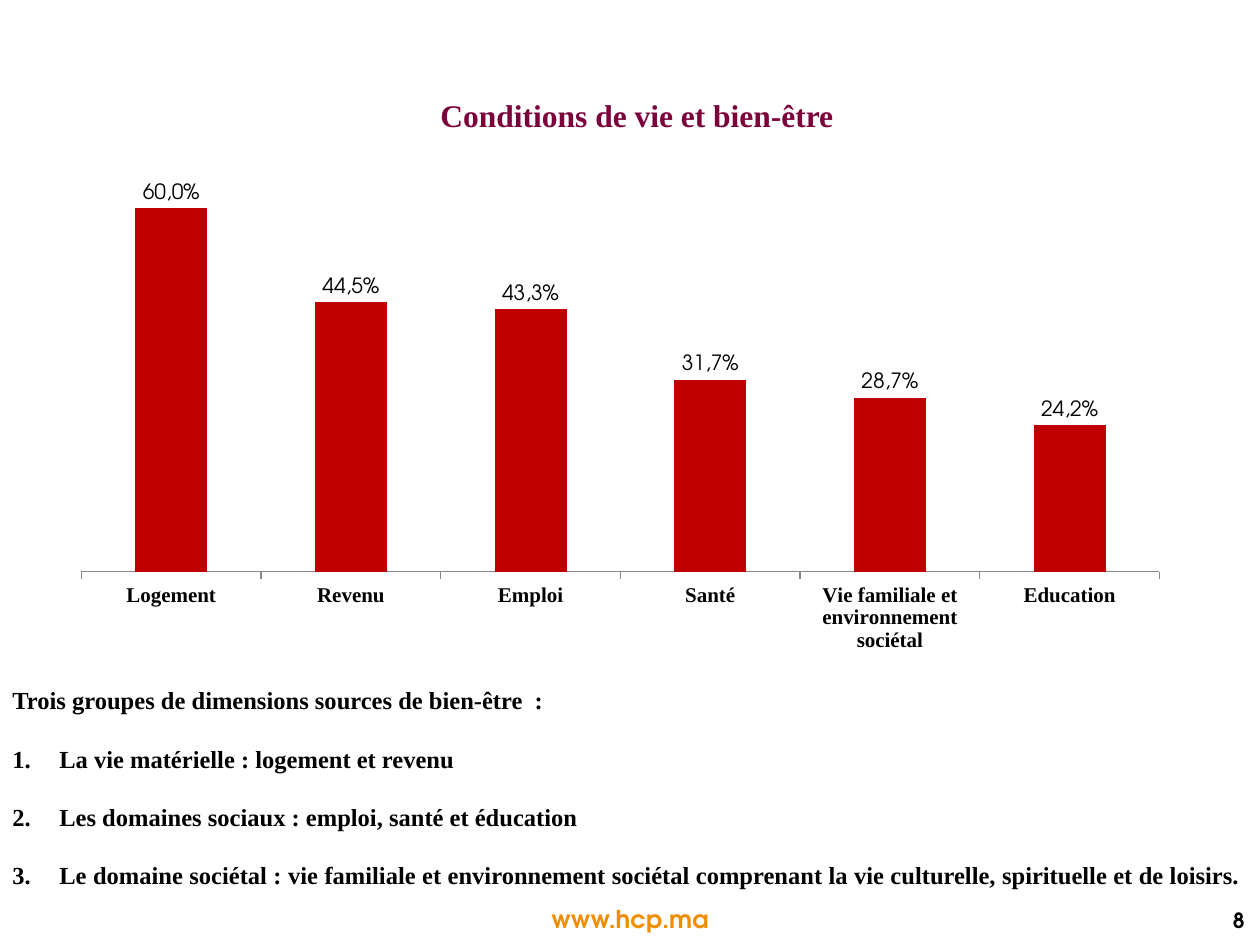
from lxml.etree import SubElement
from pptx import Presentation
from pptx.chart.data import CategoryChartData
from pptx.dml.color import RGBColor
from pptx.enum.chart import XL_CHART_TYPE, XL_LABEL_POSITION, XL_TICK_LABEL_POSITION, XL_TICK_MARK
from pptx.enum.text import MSO_ANCHOR, PP_ALIGN
from pptx.oxml.ns import qn
from pptx.util import Emu, Pt

PX = 914400 / 126
SERIF = "Times New Roman"
SANS = "TeX Gyre Adventor"
BLACK = "000000"

DIMENSIONS = [
    ("Logement", 60),
    ("Revenu", 44.5),
    ("Emploi", 43.3),
    ("Santé", 31.7),
    ("Vie familiale et environnement sociétal", 28.7),
    ("Education", 24.2),
]
GROUPS = [
    "La vie matérielle : logement et revenu",
    "Les domaines sociaux : emploi, santé et éducation  ",
    "Le domaine sociétal : vie familiale et environnement sociétal "
    "comprenant la vie culturelle, spirituelle et de loisirs.  ",
]


def px(length):
    return Emu(round(length * PX))


def color(hex_code):
    return RGBColor.from_string(hex_code)


def style_font(font, name, size, hex_code=BLACK, bold=True):
    font.name = name
    font.size = Pt(size)
    font.bold = bold
    font.color.rgb = color(hex_code)


def add_box(page, left, top, width, height):
    box = page.shapes.add_textbox(px(left), px(top), px(width), px(height))
    frame = box.text_frame
    frame.word_wrap = True
    frame.vertical_anchor = MSO_ANCHOR.MIDDLE
    return frame


def add_text(para, text, align, name, size, hex_code=BLACK):
    para.alignment = align
    span = para.add_run()
    span.text = text
    style_font(span.font, name, size, hex_code)


def number_paragraph(para, indent):
    """Give the paragraph an automatic number and a hanging indent."""
    properties = para._p.get_or_add_pPr()
    properties.set("marL", str(px(indent)))
    properties.set("indent", str(-px(indent)))
    SubElement(properties, qn("a:buFont"), typeface="+mj-lt")
    SubElement(properties, qn("a:buAutoNum"), type="arabicPeriod")


def add_groups(page):
    frame = add_box(page, 0, 679, 1260, 217)
    heading = "Trois groupes de dimensions sources de bien-être  : "
    add_text(frame.paragraphs[0], heading, PP_ALIGN.JUSTIFY, SERIF, 14)
    for group in GROUPS:
        para = frame.add_paragraph()
        para.space_before = Pt(16.6)
        number_paragraph(para, 47)
        add_text(para, group, PP_ALIGN.JUSTIFY, SERIF, 14)


def place_plot(chart, **fractions):
    """Fix the inner plot area as fractions of the chart."""
    plot_area = chart._chartSpace.chart.plotArea
    layout = plot_area.find(qn("c:layout"))
    if layout is None:
        layout = SubElement(plot_area, qn("c:layout"))
        plot_area.insert(0, layout)
    manual = SubElement(layout, qn("c:manualLayout"))
    settings = {"layoutTarget": "inner", "xMode": "edge", "yMode": "edge", **fractions}
    for tag, value in settings.items():
        SubElement(manual, qn(f"c:{tag}"), val=str(value))


def label_columns(series):
    """Show each share as a percentage with a decimal comma."""
    labels = series.data_labels
    labels.show_value = True
    labels.number_format = "0.0"
    labels.number_format_is_linked = False
    labels.position = XL_LABEL_POSITION.OUTSIDE_END
    style_font(labels.font, SANS, 12)
    for index, (_, share) in enumerate(DIMENSIONS):
        label = series.points[index].data_label
        span = label.text_frame.paragraphs[0].add_run()
        span.text = f"{share:.1f}%".replace(".", ",")
        style_font(span.font, SANS, 12, bold=False)
        label.position = XL_LABEL_POSITION.OUTSIDE_END


def add_dimension_chart(page):
    data = CategoryChartData(number_format="0.0")
    data.categories = [name for name, _ in DIMENSIONS]
    data.add_series("Series 1", [share for _, share in DIMENSIONS])
    chart = page.shapes.add_chart(
        XL_CHART_TYPE.COLUMN_CLUSTERED, px(59), px(137), px(1123), px(524), data
    ).chart
    chart.has_legend = False
    chart.has_title = False
    style_font(chart.font, SANS, 10, bold=False)
    place_plot(chart, x=0.02, y=0.02, w=0.96, h=0.81)

    values = chart.value_axis
    values.minimum_scale = 0
    values.maximum_scale = 70
    values.has_major_gridlines = False
    values.tick_labels.number_format = "0.0"
    values.tick_labels.number_format_is_linked = False
    values.visible = False

    categories = chart.category_axis
    categories.major_tick_mark = XL_TICK_MARK.OUTSIDE
    categories.tick_label_position = XL_TICK_LABEL_POSITION.LOW
    categories.format.line.color.rgb = color("868686")
    categories.format.line.width = Pt(0.75)
    style_font(categories.tick_labels.font, SERIF, 12)

    plot = chart.plots[0]
    plot.gap_width = 150
    plot.vary_by_categories = False
    series = plot.series[0]
    series.format.fill.solid()
    series.format.fill.fore_color.rgb = color("C00000")
    label_columns(series)


def main():
    deck = Presentation()
    deck.slide_width, deck.slide_height = px(1260), px(945)
    page = deck.slides.add_slide(deck.slide_layouts[6])

    title = add_box(page, 156, 95, 962, 40)
    add_text(title.paragraphs[0], "Conditions de vie et bien-être",
             PP_ALIGN.CENTER, SERIF, 18, "7B003B")
    add_dimension_chart(page)
    add_groups(page)
    footer = add_box(page, 481, 898, 298, 42)
    add_text(footer.paragraphs[0], "www.hcp.ma", PP_ALIGN.CENTER, SANS, 14, "F18E00")
    number = add_box(page, 1066, 898, 191, 44)
    add_text(number.paragraphs[0], "8", PP_ALIGN.RIGHT, SANS, 12)

    deck.save("out.pptx")


if __name__ == "__main__":
    main()
